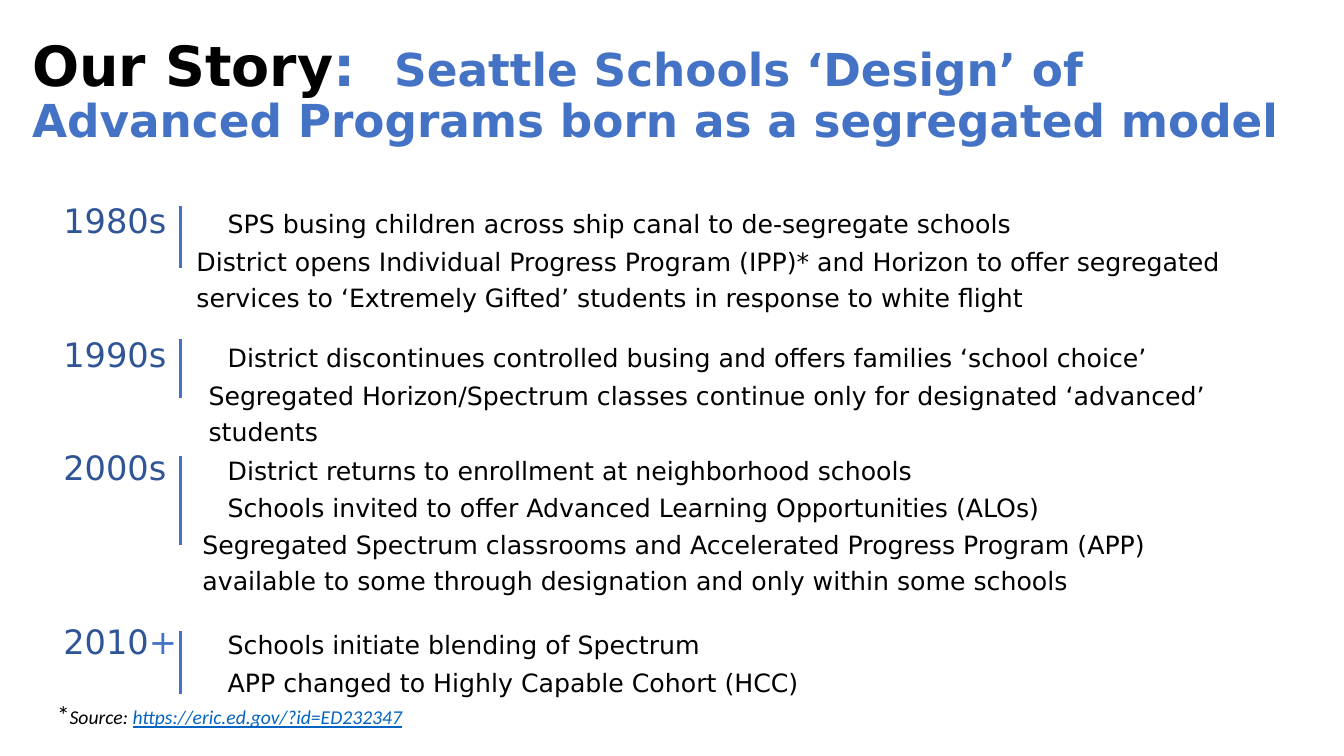
from pptx import Presentation
from pptx.dml.color import RGBColor
from pptx.enum.shapes import MSO_CONNECTOR as Line
from pptx.enum.text import MSO_ANCHOR as Anchor, MSO_AUTO_SIZE as Fit, PP_ALIGN as Align
from pptx.oxml.ns import qn
from pptx.util import Inches, Pt
from lxml.etree import SubElement as sub

BLACK, BLUE, NAVY, LINK = "000000", "4472C4", "2F5597", "0563C1"
SANS = "DejaVu Sans"
LEFT, RULE, TAB, DEEP = 0.53, 1.79, 1.26, 1.63

HEAD = dict(name=SANS, size=Pt(32.4), bold=True)
LEAD = {**HEAD, "size": Pt(39.6)}
YEAR = dict(name=SANS, size=Pt(24))
BODY = dict(name=SANS, size=Pt(18))
NOTE = dict(name="Calibri", size=Pt(14), italic=True)

# Label runs, box (top, width, height), rule (top, bottom), rows (indent, text)
ERAS = [
    ([("1980s \t", NAVY)], (1.85, 12.21, 1.62), (2.04, 2.66), [
        (DEEP, "SPS busing children across ship canal to de-segregate schools"),
        (1.32, "District opens Individual Progress Program (IPP)* and Horizon to offer "
               "segregated services to ‘Extremely Gifted’ students in response to white flight"),
    ]),
    ([("1990s \t", NAVY)], (3.18, 12.58, 0.91), (3.36, 3.95), [
        (DEEP, "District discontinues controlled busing and offers families ‘school choice’"),
        (1.44, "Segregated Horizon/Spectrum classes continue only for designated "
               "‘advanced’ students"),
    ]),
    ([("2000s \t", NAVY)], (4.3, 12.03, 1.64), (4.52, 5.41), [
        (DEEP, "District returns to enrollment at neighborhood schools"),
        (DEEP, "Schools invited to offer Advanced Learning Opportunities (ALOs)"),
        (1.38, "Segregated Spectrum classrooms and Accelerated Progress Program (APP) "
               "available to some through designation and only within some schools"),
    ]),
    ([("2010", NAVY), ("+\t", BLUE)], (6.03, 11.51, 0.91), (6.26, 6.89), [
        (DEEP, "Schools initiate blending of Spectrum"),
        (DEEP, "APP changed to Highly Capable Cohort (HCC)"),
    ]),
]


def rgb(code):
    return RGBColor.from_string(code)


def add_box(slide, left, top, width, height):
    box = slide.shapes.add_textbox(*map(Inches, (left, top, width, height)))
    frame = box.text_frame
    frame.word_wrap = True
    frame.auto_size = Fit.SHAPE_TO_FIT_TEXT
    return frame


def add_run(para, text, color, style):
    run = para.add_run()
    run.text = text
    for key, value in style.items():
        setattr(run.font, key, value)
    run.font.color.rgb = rgb(color)


def hang(para, indent):
    """Give the paragraph a hanging indent and the shared tab stop."""
    props = para._p.get_or_add_pPr()
    props.set("marL", str(Inches(indent)))
    props.set("indent", str(-Inches(indent)))
    tabs = sub(props, qn("a:tabLst"))
    sub(tabs, qn("a:tab"), pos=str(Inches(TAB)), algn="l")
    para.line_spacing = 1.2


def add_title(slide):
    frame = add_box(slide, 0.22, 0.2, 12.76, 1.45)
    frame.auto_size = Fit.NONE
    frame.vertical_anchor = Anchor.MIDDLE
    para = frame.paragraphs[0]
    para.line_spacing = 0.9
    add_run(para, "Our Story", BLACK, LEAD)
    add_run(para, ":  ", BLUE, LEAD)
    add_run(para, "Seattle Schools ‘Design’ of Advanced Programs born as a segregated model",
            BLUE, HEAD)


def add_rule(slide, top, bottom):
    ends = map(Inches, (RULE, top, RULE, bottom))
    rule = slide.shapes.add_connector(Line.STRAIGHT, *ends)
    rule.line.color.rgb = rgb(BLUE)
    rule.line.width = Pt(2.25)
    sub(rule._element.spPr, qn("a:effectLst"))


def add_era(slide, label, place, span, rows):
    frame = add_box(slide, LEFT, *place)
    for i, (indent, text) in enumerate(rows):
        para = frame.add_paragraph() if i else frame.paragraphs[0]
        hang(para, indent)
        if i:
            text = "\t" + text
        else:
            for part, color in label:
                add_run(para, part, color, YEAR)
        add_run(para, text, BLACK, BODY)
    add_rule(slide, *span)


def add_source(slide):
    para = add_box(slide, 0.4, 6.89, 3.69, 0.4).paragraphs[0]
    para.alignment = Align.RIGHT
    add_run(para, "*", BLACK, dict(name="Calibri", size=Pt(18)))
    add_run(para, "Source: ", BLACK, NOTE)
    add_run(para, "https://eric.ed.gov/?id=ED232347", LINK, {**NOTE, "underline": True})


def main():
    deck = Presentation()
    deck.slide_width, deck.slide_height = Inches(13.33), Inches(7.5)
    slide = deck.slides.add_slide(deck.slide_layouts[6])
    add_title(slide)
    for era in ERAS:
        add_era(slide, *era)
    add_source(slide)
    deck.save("out.pptx")


if __name__ == "__main__":
    main()
